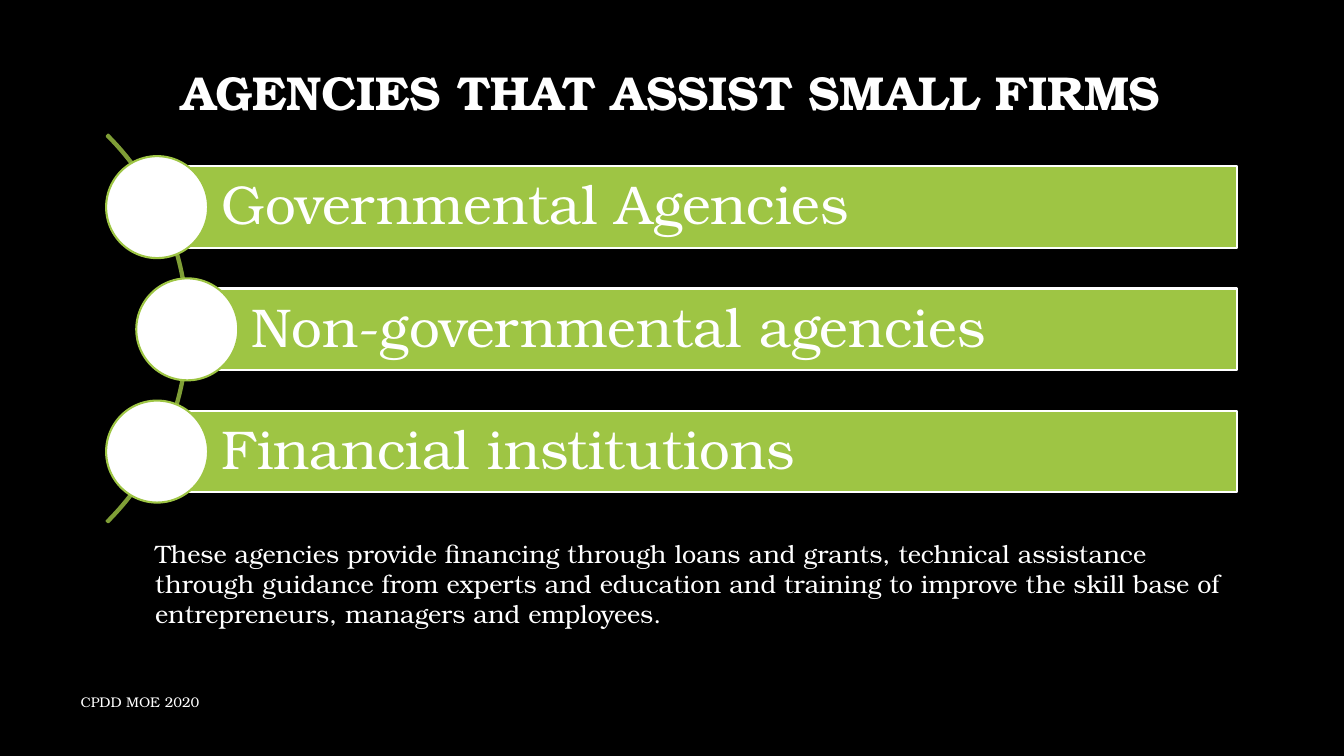
"""Build a slide on the agencies that assist small firms."""
from pptx import Presentation
from pptx.dml.color import RGBColor
from pptx.enum.shapes import MSO_SHAPE
from pptx.enum.text import MSO_ANCHOR, PP_ALIGN
from pptx.util import Cm, Pt

RECTANGLE, OVAL, ARC = MSO_SHAPE.RECTANGLE, MSO_SHAPE.OVAL, MSO_SHAPE.BLOCK_ARC
TOP, MIDDLE = MSO_ANCHOR.TOP, MSO_ANCHOR.MIDDLE
LEFT, CENTER = PP_ALIGN.LEFT, PP_ALIGN.CENTER
FONT = "TeX Gyre Bonum"
COLORS = {"black": "000000", "white": "FFFFFF", "green": "9EC544", "olive": "7F9E36"}


def write(box, text, size, bold=False, align=LEFT, anchor=MIDDLE, spacing=1.0,
          left_inset=0.25, inset=0.25):
    """Put one formatted paragraph into a shape or text box."""
    frame = box.text_frame
    frame.word_wrap = True
    frame.vertical_anchor = anchor
    frame.margin_left = Cm(left_inset)
    frame.margin_right = Cm(inset)
    frame.margin_top = frame.margin_bottom = Cm(inset / 2 if inset == 0.25 else inset)
    para = frame.paragraphs[0]
    para.alignment = align
    para.line_spacing = spacing
    span = para.add_run()
    span.text = text
    span.font.name = FONT
    span.font.size = Pt(size)
    span.font.bold = bold
    span.font.color.rgb = RGBColor.from_string(COLORS["white"])


def draw(page, kind, left, top, width, height, line, fill=None):
    """Add a preset shape with an outline and an optional fill."""
    shape = page.shapes.add_shape(kind, Cm(left), Cm(top), Cm(width), Cm(height))
    shape.shadow.inherit = False
    shape.line.color.rgb = RGBColor.from_string(COLORS[line])
    shape.line.width = Pt(1.5)
    if fill:
        shape.fill.solid()
        shape.fill.fore_color.rgb = RGBColor.from_string(COLORS[fill])
    else:
        shape.fill.background()
    return shape


deck = Presentation()
deck.slide_width, deck.slide_height = Cm(33.87), Cm(19.05)
page = deck.slides.add_slide(deck.slide_layouts[6])
page.background.fill.solid()
page.background.fill.fore_color.rgb = RGBColor.from_string(COLORS["black"])

title = page.shapes.add_textbox(Cm(2.54), Cm(1.19), Cm(28.75), Cm(2.39))
write(title, "AGENCIES THAT ASSIST SMALL FIRMS", 34, bold=True, align=CENTER, spacing=0.9)

arc = draw(page, ARC, -9.07, 1.37, 13.82, 13.82, "olive")
for index, value in enumerate((189, 27, 0.004)):
    arc.adjustments[index] = value

bar_top, bar_height, bar_right, row_pitch = 4.19, 2.06, 31.17, 3.08
circle_size = 2.57
agencies = [
    ("Governmental Agencies", 3.96),
    ("Non-governmental agencies", 4.72),
    ("Financial institutions", 3.96),
]
for row, (agency, bar_left) in enumerate(agencies):
    top = bar_top + row * row_pitch
    bar = draw(page, RECTANGLE, bar_left, top, bar_right - bar_left, bar_height,
               "white", "green")
    write(bar, agency, 39, spacing=0.9, left_inset=1.63, inset=0.28)
    draw(page, OVAL, bar_left - circle_size / 2, top + (bar_height - circle_size) / 2,
         circle_size, circle_size, "green", "white")

footer = page.shapes.add_textbox(Cm(1.78), Cm(17.17), Cm(18.54), Cm(1.02))
write(footer, "CPDD MOE 2020", 10)

summary = page.shapes.add_textbox(Cm(3.66), Cm(13.44), Cm(27.64), Cm(2.57))
write(summary, "These agencies provide financing through loans and grants, technical "
      "assistance through guidance from experts and education and training to improve "
      "the skill base of entrepreneurs, managers and employees.", 18, anchor=TOP)

deck.save("out.pptx")
